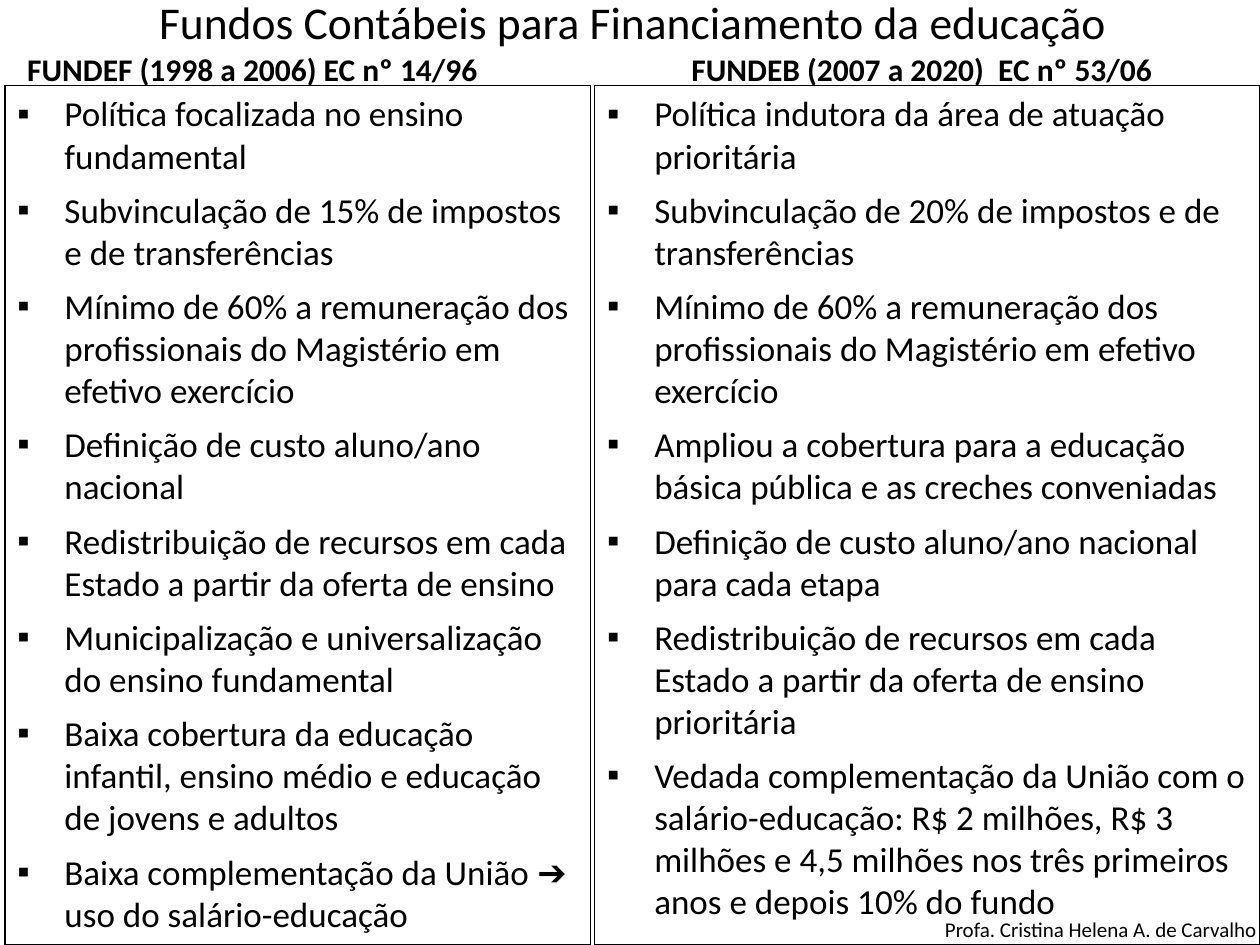
from lxml import etree
from pptx import Presentation, util as u
from pptx.dml.color import RGBColor
from pptx.enum import shapes, text
from pptx.oxml.ns import qn

FONT = "Calibri"
COLORS = {"ink": "000000", "paper": "FFFFFF"}
INDENT = u.Cm(0.95)

FUNDEF = [
    "Política focalizada no ensino fundamental",
    "Subvinculação de 15% de impostos e de transferências",
    "Mínimo de 60% a remuneração dos profissionais do Magistério em efetivo exercício",
    "Definição de custo aluno/ano nacional",
    "Redistribuição de recursos em cada Estado a partir da oferta de ensino",
    "Municipalização e universalização do ensino fundamental",
    "Baixa cobertura da educação infantil, ensino médio e educação de jovens e adultos",
    "Baixa complementação da União ➔ uso do salário-educação",
]
FUNDEB = [
    "Política indutora da área de atuação prioritária",
    "Subvinculação de 20% de impostos e de transferências",
    "Mínimo de 60% a remuneração dos profissionais do Magistério em efetivo exercício",
    "Ampliou a cobertura para a educação básica pública e as creches conveniadas",
    "Definição de custo aluno/ano nacional para cada etapa",
    "Redistribuição de recursos em cada Estado a partir da oferta de ensino prioritária",
    "Vedada complementação da União com o salário-educação: R$ 2 milhões, "
    "R$ 3 milhões e 4,5 milhões nos três primeiros anos e depois 10% do fundo",
]


def color(name):
    return RGBColor.from_string(COLORS[name])


def format_runs(paragraph, size, bold=False):
    for run in paragraph.runs:
        run.font.name = FONT
        run.font.size = u.Pt(size)
        run.font.bold = bold
        run.font.color.rgb = color("ink")


def add_line(slide, box, wording, size, bold=False):
    """Place one line of text in box (left, top, width, height in cm)."""
    frame = slide.shapes.add_textbox(*map(u.Cm, box)).text_frame
    frame.word_wrap = True
    frame.text = wording
    format_runs(frame.paragraphs[0], size, bold)
    return frame


def add_title(slide, box, wording):
    frame = add_line(slide, box, wording, 26)
    frame.vertical_anchor = text.MSO_ANCHOR.MIDDLE
    frame.paragraphs[0].alignment = text.PP_ALIGN.CENTER


def add_bullet(paragraph):
    properties = paragraph._p.get_or_add_pPr()
    properties.set("marL", str(INDENT))
    properties.set("indent", str(-INDENT))
    etree.SubElement(properties, qn("a:buFont"), typeface="Arial")
    etree.SubElement(properties, qn("a:buChar"), char="▪")


def add_fund(slide, box, heading, heading_offset, heading_width, features):
    """Place a framed list of features in box, with its heading just above."""
    left, top, width, height = box
    heading_box = (left + heading_offset, top - 0.99, heading_width, 1.14)
    panel = slide.shapes.add_shape(shapes.MSO_SHAPE.RECTANGLE, *map(u.Cm, box))
    panel.shadow.inherit = False
    panel.fill.background()
    panel.line.color.rgb = color("ink")
    panel.line.width = u.Pt(0.75)

    # Bulleted features
    frame = panel.text_frame
    frame.word_wrap = True
    frame.vertical_anchor = text.MSO_ANCHOR.TOP
    frame.text = "\n".join(features)
    for paragraph in frame.paragraphs:
        paragraph.alignment = text.PP_ALIGN.LEFT
        paragraph.space_after = u.Pt(7)
        add_bullet(paragraph)
        format_runs(paragraph, 20)

    # Heading
    title = add_line(slide, heading_box, heading, 18, bold=True)
    title.paragraphs[0].line_spacing = 1.2


def main():
    deck = Presentation()
    deck.slide_width, deck.slide_height = u.Cm(25.4), u.Cm(19.05)
    slide = deck.slides.add_slide(deck.slide_layouts[6])
    slide.background.fill.solid()
    slide.background.fill.fore_color.rgb = color("paper")

    # Author
    add_line(slide, (18.8, 18.36, 6.9, 0.76), "Profa. Cristina Helena A. de Carvalho", 12)

    # Title
    add_title(slide, (0.23, 0.13, 25.27, 0.61),
              "Fundos Contábeis para Financiamento da educação ")

    # The two funds side by side
    top, height = 1.73, 17.32
    add_fund(slide, (0.1, top, 11.81, height),
             "FUNDEF (1998 a 2006) EC nº 14/96", 0.2, 10.21, FUNDEF)
    add_fund(slide, (11.99, top, 13.41, height),
             "FUNDEB (2007 a 2020)  EC nº 53/06", 1.7, 11.81, FUNDEB)

    deck.save("out.pptx")


if __name__ == "__main__":
    main()
